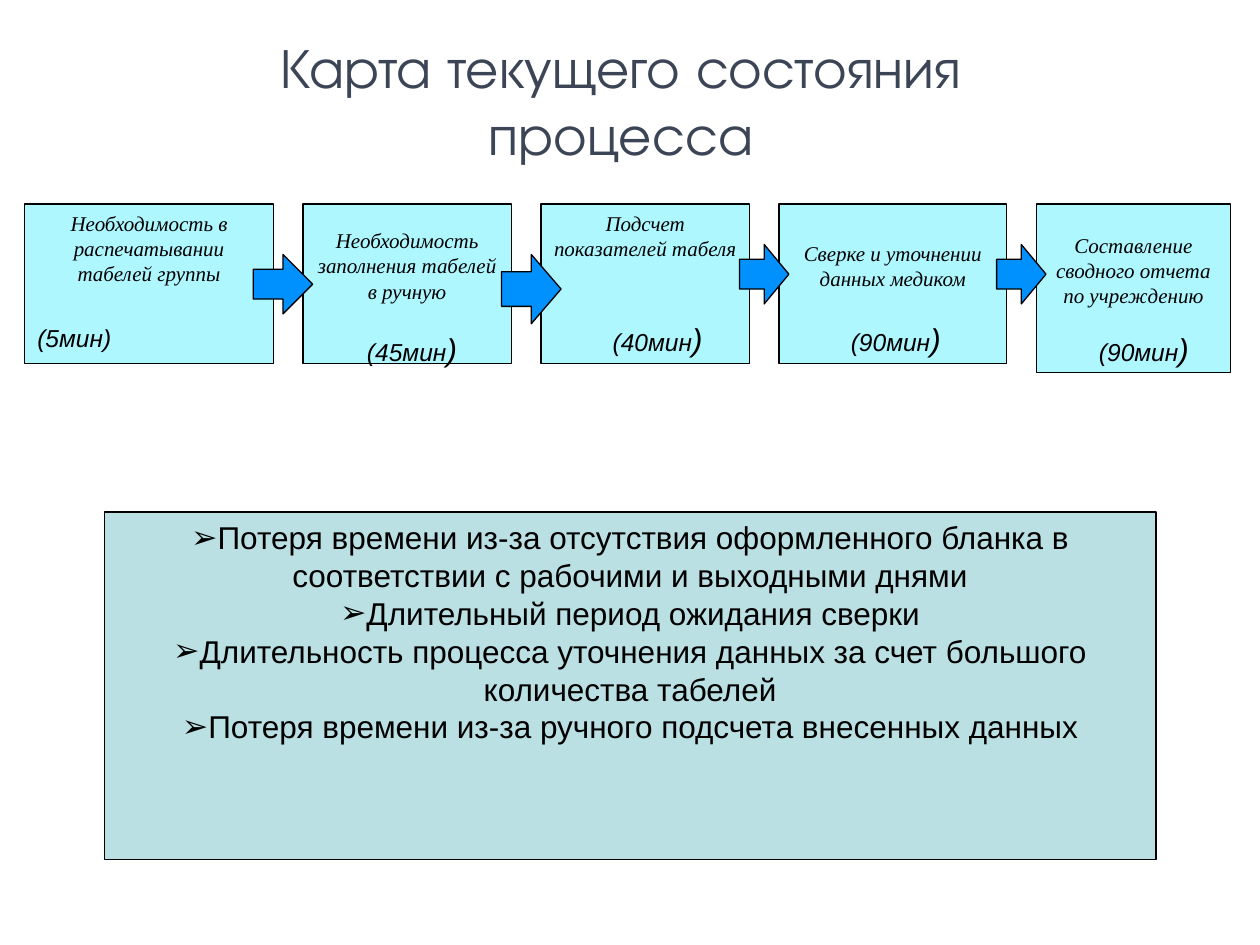
from dataclasses import dataclass
from typing import NamedTuple

from lxml import etree
from pptx import Presentation
from pptx.dml.color import RGBColor
from pptx.enum.shapes import MSO_SHAPE
from pptx.enum.text import MSO_ANCHOR, MSO_AUTO_SIZE, PP_ALIGN
from pptx.oxml.ns import qn
from pptx.util import Pt

RECTANGLE, RIGHT_ARROW = MSO_SHAPE.RECTANGLE, MSO_SHAPE.RIGHT_ARROW
TOP, MIDDLE = MSO_ANCHOR.TOP, MSO_ANCHOR.MIDDLE
LEFT, CENTER = PP_ALIGN.LEFT, PP_ALIGN.CENTER
NO_AUTOFIT = MSO_AUTO_SIZE.NONE


@dataclass(frozen=True)
class Theme:
    title_color: RGBColor = RGBColor(0x3B, 0x45, 0x55)
    ink: RGBColor = RGBColor(0, 0, 0)
    step_fill: RGBColor = RGBColor(0xAF, 0xF7, 0xFF)
    arrow_fill: RGBColor = RGBColor(0x00, 0x91, 0xFE)
    losses_fill: RGBColor = RGBColor(0xBB, 0xE0, 0xE3)
    title_font: str = "TeX Gyre Adventor"
    step_font: str = "Times New Roman"
    font: str = "Arial"
    title_size: float = 32
    step_size: float = 12
    time_size: float = 14
    bracket_size: float = 18
    losses_size: float = 18
    line_width: float = 0.75


class Area(NamedTuple):
    left: float
    top: float
    width: float
    height: float

    def lengths(self) -> list:
        return [Pt(value) for value in self]


class Step(NamedTuple):
    text: str
    width: float
    height: float
    anchor: MSO_ANCHOR


class Duration(NamedTuple):
    text: str
    left: float
    top: float


THEME = Theme()
STEPS_LEFT, STEPS_TOP, STEP_GAP = 14.2, 116.6, 17
RESERVED_BELOW = 24.3  # bottom inset that keeps centred text above the duration

STEPS = [
    Step("Необходимость в распечатывании табелей группы", 142, 91, TOP),
    Step("Необходимость заполнения табелей в ручную", 119, 91, MIDDLE),
    Step("Подсчет показателей табеля", 119, 91, TOP),
    Step("Сверке и уточнении данных медиком", 130, 91, MIDDLE),
    Step("Составление сводного отчета по учреждению", 111, 96.5, MIDDLE),
]
FIRST_DURATION = "(5мин)"
DURATIONS = [
    Duration("(45мин", 202.3, 185),
    Duration("(40мин", 342.7, 179.3),
    Duration("(90мин", 478.8, 179.3),
    Duration("(90мин", 620.6, 185),
]
ARROWS = [
    Area(144.7, 145.4, 34, 34),
    Area(286.6, 145.4, 34, 39.6),
    Area(422.6, 139.7, 28.2, 34),
    Area(569.5, 139.7, 28.2, 34),
]
LOSSES = [
    "Потеря времени из-за отсутствия оформленного бланка в "
    "соответствии с рабочими и выходными днями",
    "Длительный период ожидания сверки",
    "Длительность процесса уточнения данных за счет большого количества табелей",
    "Потеря времени из-за ручного подсчета внесенных данных",
]


def place(shape, area: Area) -> None:
    shape.left, shape.top, shape.width, shape.height = area.lengths()


def paint(shape, fill: RGBColor) -> None:
    shape.fill.solid()
    shape.fill.fore_color.rgb = fill
    shape.line.color.rgb = THEME.ink
    shape.line.width = Pt(THEME.line_width)


def add_figure(page, kind: MSO_SHAPE, area: Area, fill: RGBColor):
    figure = page.shapes.add_shape(kind, *area.lengths())
    figure.shadow.inherit = False
    paint(figure, fill)
    return figure


def style(para, name: str, size: float, color: RGBColor = THEME.ink,
          italic: bool = False, align: PP_ALIGN = CENTER) -> None:
    para.alignment = align
    para.font.name = name
    para.font.size = Pt(size)
    para.font.color.rgb = color
    para.font.italic = italic


def fill_title(page) -> None:
    title = page.shapes.title
    place(title, Area(76.3, 15.1, 557.3, 84))
    frame = title.text_frame
    frame.text = "Карта текущего состояния процесса"
    frame.auto_size = NO_AUTOFIT
    frame.vertical_anchor = TOP
    style(frame.paragraphs[0], THEME.title_font, THEME.title_size, THEME.title_color)


def add_step(page, step: Step, left: float):
    area = Area(left, STEPS_TOP, step.width, step.height)
    box = add_figure(page, RECTANGLE, area, THEME.step_fill)
    frame = box.text_frame
    frame.word_wrap = True
    frame.vertical_anchor = step.anchor
    if step.anchor == MIDDLE:
        frame.margin_bottom = Pt(RESERVED_BELOW)
    frame.text = step.text
    style(frame.paragraphs[0], THEME.step_font, THEME.step_size, italic=True)
    return box


def add_steps(page) -> None:
    left = STEPS_LEFT
    boxes = []
    for step in STEPS:
        boxes.append(add_step(page, step, left))
        left += step.width + STEP_GAP
    para = boxes[0].text_frame.add_paragraph()
    para.text = FIRST_DURATION
    para.space_before = Pt(21)
    style(para, THEME.font, THEME.time_size, italic=True, align=LEFT)


def add_duration(page, duration: Duration) -> None:
    """Write a step's time, closed by a larger bracket."""
    area = Area(duration.left, duration.top, 66.2, 28.8)
    box = page.shapes.add_textbox(*area.lengths())
    box.text_frame.word_wrap = False
    para = box.text_frame.paragraphs[0]
    para.add_run().text = duration.text
    bracket = para.add_run()
    bracket.text = ")"
    style(para, THEME.font, THEME.time_size, italic=True)
    bracket.font.size = Pt(THEME.bracket_size)


def add_bullet(para, mark: str) -> None:
    properties = para._p.get_or_add_pPr()
    properties.set("marL", "0")
    properties.set("indent", "0")
    etree.SubElement(properties, qn("a:buChar")).set("char", mark)


def fill_losses(page) -> None:
    body = page.placeholders[1]
    place(body, Area(59.6, 292.6, 601, 198.5))
    paint(body, THEME.losses_fill)
    frame = body.text_frame
    frame.text = "\n".join(LOSSES)
    frame.auto_size = NO_AUTOFIT
    frame.vertical_anchor = TOP
    for para in frame.paragraphs:
        add_bullet(para, "➢")
        para.space_before = Pt(0)
        style(para, THEME.font, THEME.losses_size)


def main() -> None:
    deck = Presentation()
    deck.slide_width, deck.slide_height = Pt(720), Pt(540)
    page = deck.slides.add_slide(deck.slide_layouts[1])
    fill_title(page)
    fill_losses(page)
    add_steps(page)
    for area in ARROWS:
        add_figure(page, RIGHT_ARROW, area, THEME.arrow_fill)
    for duration in DURATIONS:
        add_duration(page, duration)
    deck.save("out.pptx")


if __name__ == "__main__":
    main()
